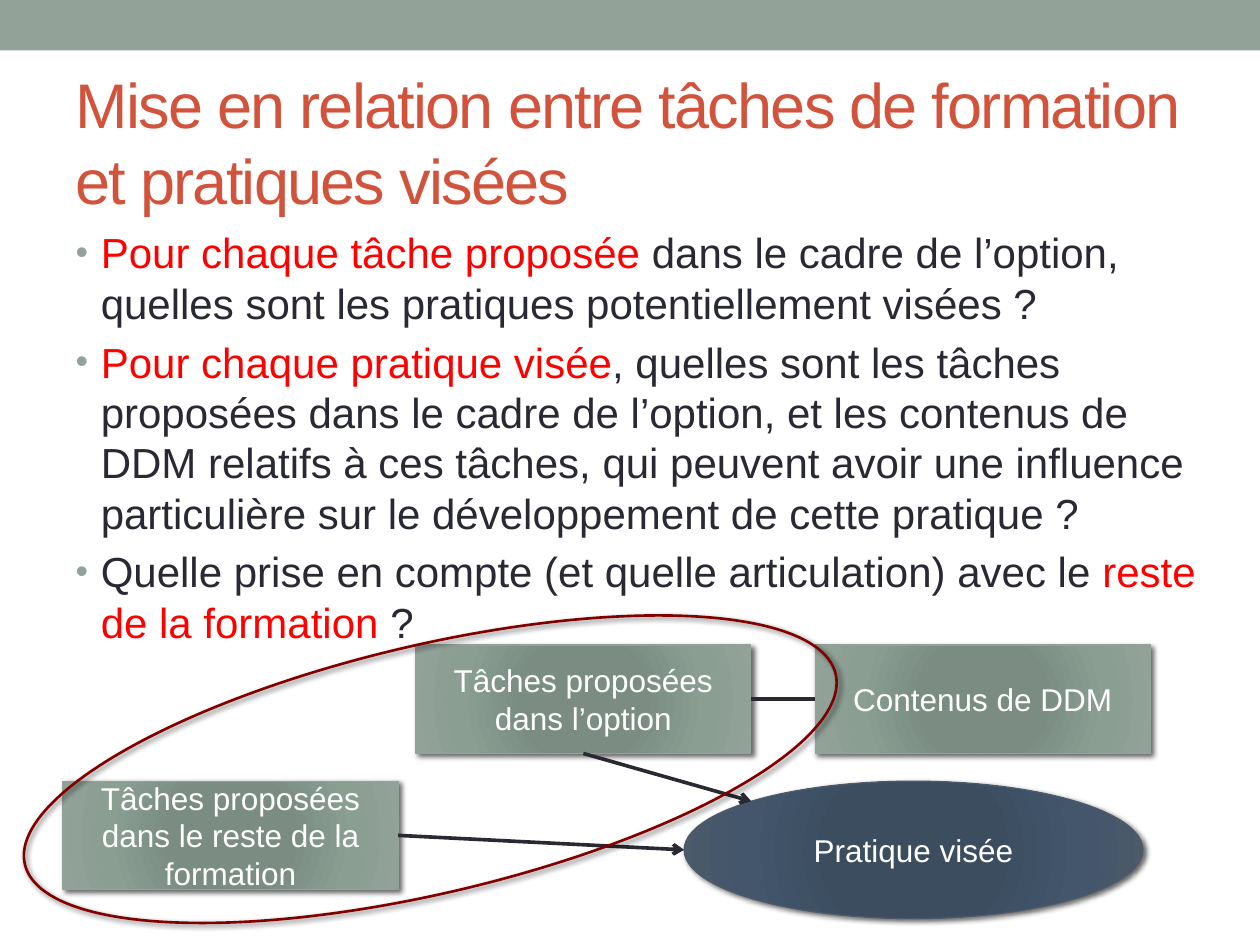
from math import sqrt
from lxml.etree import fromstring
from pptx import Presentation
from pptx.dml.color import RGBColor as Rgb
from pptx.enum.shapes import MSO_CONNECTOR as Link, MSO_SHAPE as Kind
from pptx.enum.text import MSO_ANCHOR as Anchor, MSO_AUTO_SIZE as Fit, PP_ALIGN as Align
from pptx.oxml.ns import qn
from pptx.util import Inches, Pt

THEME = {
    "font": "Arial", "head": 36, "body": 24, "label": 18,
    "title": "D2533C", "text": "292934", "key": "FF0000", "light": "FFFFFF",
    "sage": "93A299", "slate": "4C5A6A", "ring": "800000",
    "sage_stops": [(0, "7B8E82"), (34, "7B8D83"), (70, "8A9E92"), (100, "93A299")],
    "slate_stops": [(0, "3B4D61"), (34, "3C4D60"), (70, "43566B"), (100, "4C5A6A")],
}
TITLE = "Mise en relation entre tâches de formation et pratiques visées"
POINTS = [
    [("Pour chaque tâche proposée ", "key"),
     ("dans le cadre de l’option, quelles sont les pratiques potentiellement visées ?", "text")],
    [("Pour chaque pratique visée", "key"),
     (", quelles sont les tâches proposées dans le cadre de l’option, et les contenus de DDM "
      "relatifs à ces tâches, qui peuvent avoir une influence particulière sur le développement "
      "de cette pratique ?", "text")],
    [("Quelle prise en compte (et quelle articulation) avec le ", "text"),
     ("reste de la formation ", "key"), ("?", "text")],
]
BOX = (2.66, 0.86)
GOAL = (5.43, 6.2, 3.64, 1.09)
NODES = {
    "goal": ("Pratique visée", Kind.OVAL, GOAL, "slate"),
    "task": ("Tâches proposées dans l’option", Kind.RECTANGLE, (3.3, 5.12, *BOX), "sage"),
    "topic": ("Contenus de DDM", Kind.RECTANGLE, (6.47, 5.12, *BOX), "sage"),
    "rest": ("Tâches proposées dans le reste de la formation", Kind.RECTANGLE,
             (0.5, 6.2, *BOX), "sage"),
}
NS = 'xmlns:a="http://schemas.openxmlformats.org/drawingml/2006/main"'


def paint(name):
    return Rgb.from_string(THEME[name])


def place(shape, area):
    shape.left, shape.top, shape.width, shape.height = map(Inches, area)


def write(para, text, size, color):
    run = para.add_run()
    run.text = text
    run.font.name = THEME["font"]
    run.font.size = Pt(THEME[size])
    run.font.color.rgb = paint(color)
    return run


def mark(para):
    props = para._p.get_or_add_pPr()
    props.set("marL", str(Inches(0.2)))
    props.set("indent", str(-Inches(0.2)))
    for xml in (f'<a:spcBef {NS}><a:spcPct val="20000"/></a:spcBef>',
                f'<a:buClr {NS}><a:srgbClr val="{THEME["sage"]}"/></a:buClr>',
                f'<a:buSzPct {NS} val="85000"/>',
                f'<a:buFont {NS} typeface="Arial"/>',
                f'<a:buChar {NS} char="•"/>'):
        props.append(fromstring(xml))


def blend(shape, stops):
    props = shape._element.spPr
    steps = "".join(f'<a:gs pos="{pos * 1000}"><a:srgbClr val="{color}"/></a:gs>'
                    for pos, color in stops)
    grad = fromstring(
        f'<a:gradFill {NS} rotWithShape="1"><a:gsLst>{steps}</a:gsLst><a:path path="circle">'
        '<a:fillToRect l="100000" t="100000" r="100000" b="100000"/></a:path></a:gradFill>')
    props.find(qn("a:prstGeom")).addnext(grad)


def shade(shape):
    shape._element.spPr.append(fromstring(
        f'<a:effectLst {NS}><a:outerShdw blurRad="{Pt(3)}" dist="{Pt(2)}" dir="2700000" '
        'algn="ctr" rotWithShape="0"><a:srgbClr val="000000"><a:alpha val="60000"/>'
        '</a:srgbClr></a:outerShdw></a:effectLst>'))


def edge(shape, color, width):
    shape.line.color.rgb = paint(color)
    shape.line.width = Pt(width)


def node(slide, text, kind, area, tone):
    shape = slide.shapes.add_shape(kind, *map(Inches, area))
    blend(shape, THEME[tone + "_stops"])
    edge(shape, tone, 0.75)
    shade(shape)
    frame = shape.text_frame
    frame.word_wrap = True
    frame.vertical_anchor = Anchor.MIDDLE
    para = frame.paragraphs[0]
    para.alignment = Align.CENTER
    write(para, text, "label", "light")
    return shape


def join(slide, start, site, end, arrow=True):
    line = slide.shapes.add_connector(Link.STRAIGHT, 0, 0, *map(Inches, end))
    line.begin_connect(start, site)
    edge(line, "text", 2.08)
    if arrow:
        line.line._get_or_add_ln().append(fromstring(f'<a:tailEnd {NS} type="arrow"/>'))
    line._element.spPr.append(fromstring(f"<a:effectLst {NS}/>"))
    return line


def main():
    deck = Presentation()
    deck.slide_width, deck.slide_height = Inches(10), Inches(7.5)
    slide = deck.slides.add_slide(deck.slide_layouts[1])

    band = slide.shapes.add_shape(Kind.RECTANGLE, 0, 0, Inches(10), Inches(0.4))
    band.fill.solid()
    band.fill.fore_color.rgb = paint("sage")
    band.line.fill.background()
    band.shadow.inherit = False

    head, body = slide.placeholders
    place(head, (0.5, 0.58, 9, 1.08))
    place(body, (0.5, 1.75, 9.26, 5.33))
    for holder in (head, body):
        holder.text_frame.auto_size = Fit.NONE
    head.text_frame.vertical_anchor = Anchor.MIDDLE
    para = head.text_frame.paragraphs[0]
    para.alignment = Align.LEFT
    run = write(para, TITLE, "head", "title")
    run.font._element.set("spc", "-100")

    frame = body.text_frame
    for i, point in enumerate(POINTS):
        para = frame.add_paragraph() if i else frame.paragraphs[0]
        mark(para)
        for text, color in point:
            write(para, text, "body", color)

    nodes = {name: node(slide, *data) for name, data in NODES.items()}
    left, top, width, height = GOAL
    inset = (1 - 1 / sqrt(2)) / 2
    join(slide, nodes["task"], 2, (left + width * inset, top + height * inset))
    link = join(slide, nodes["task"], 3, (6.47, 5.55), arrow=False)
    link.end_connect(nodes["topic"], 1)
    join(slide, nodes["rest"], 3, (left, top + height / 2))

    ring = slide.shapes.add_shape(Kind.OVAL, *map(Inches, (0.11, 5.12, 6.61, 1.97)))
    ring.rotation = -13.2
    ring.fill.background()
    edge(ring, "ring", 1.5)
    shade(ring)
    deck.save("out.pptx")


if __name__ == "__main__":
    main()
